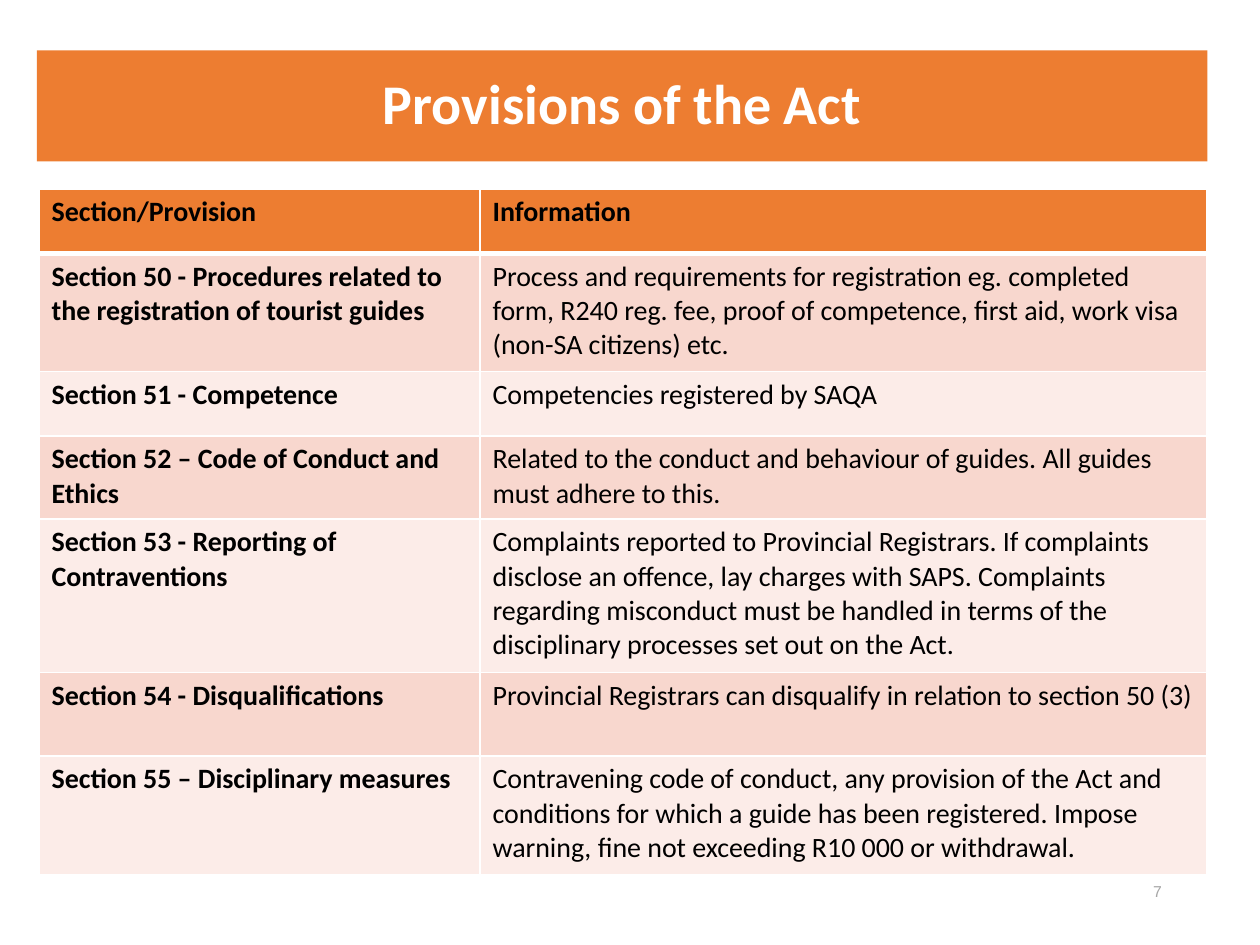
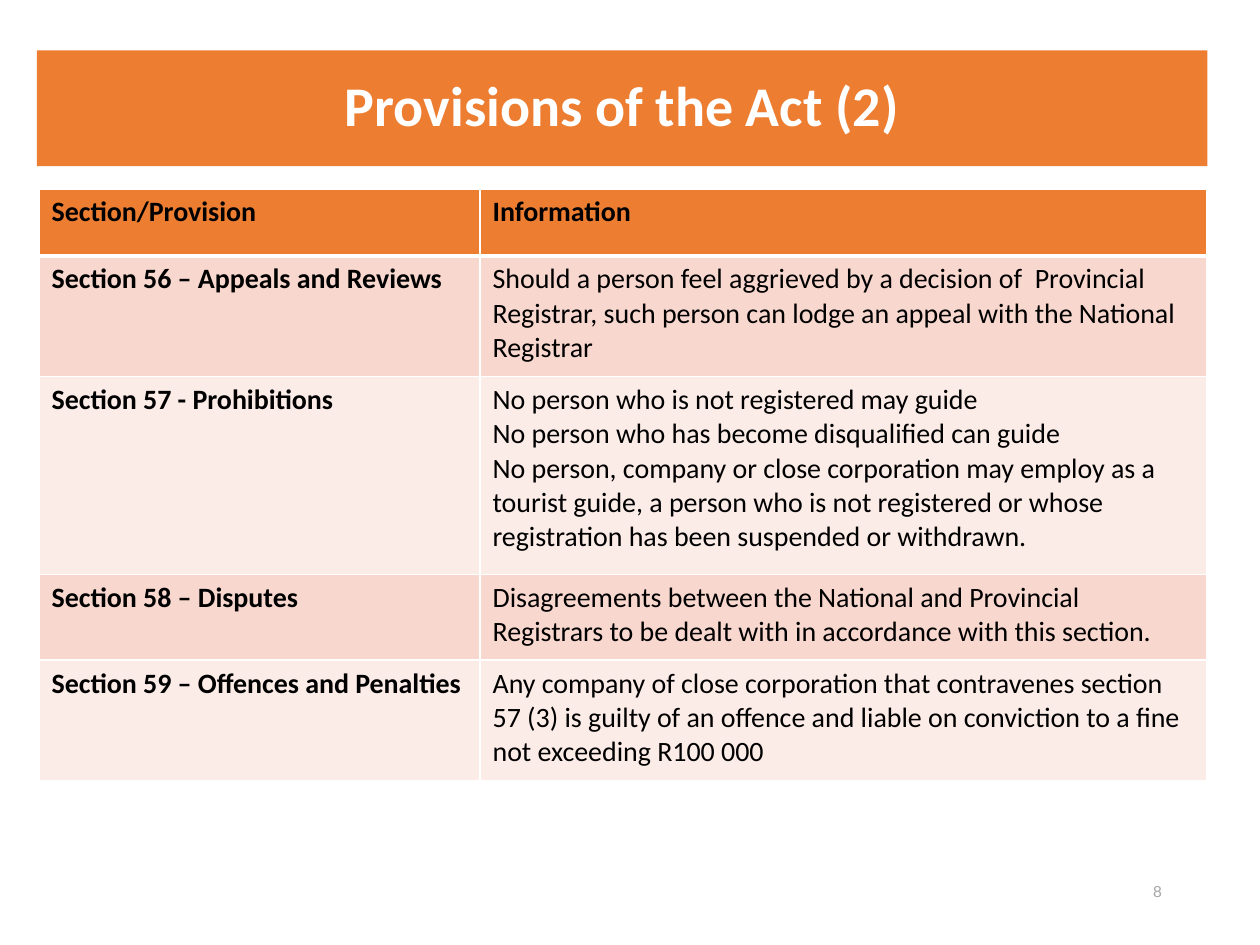
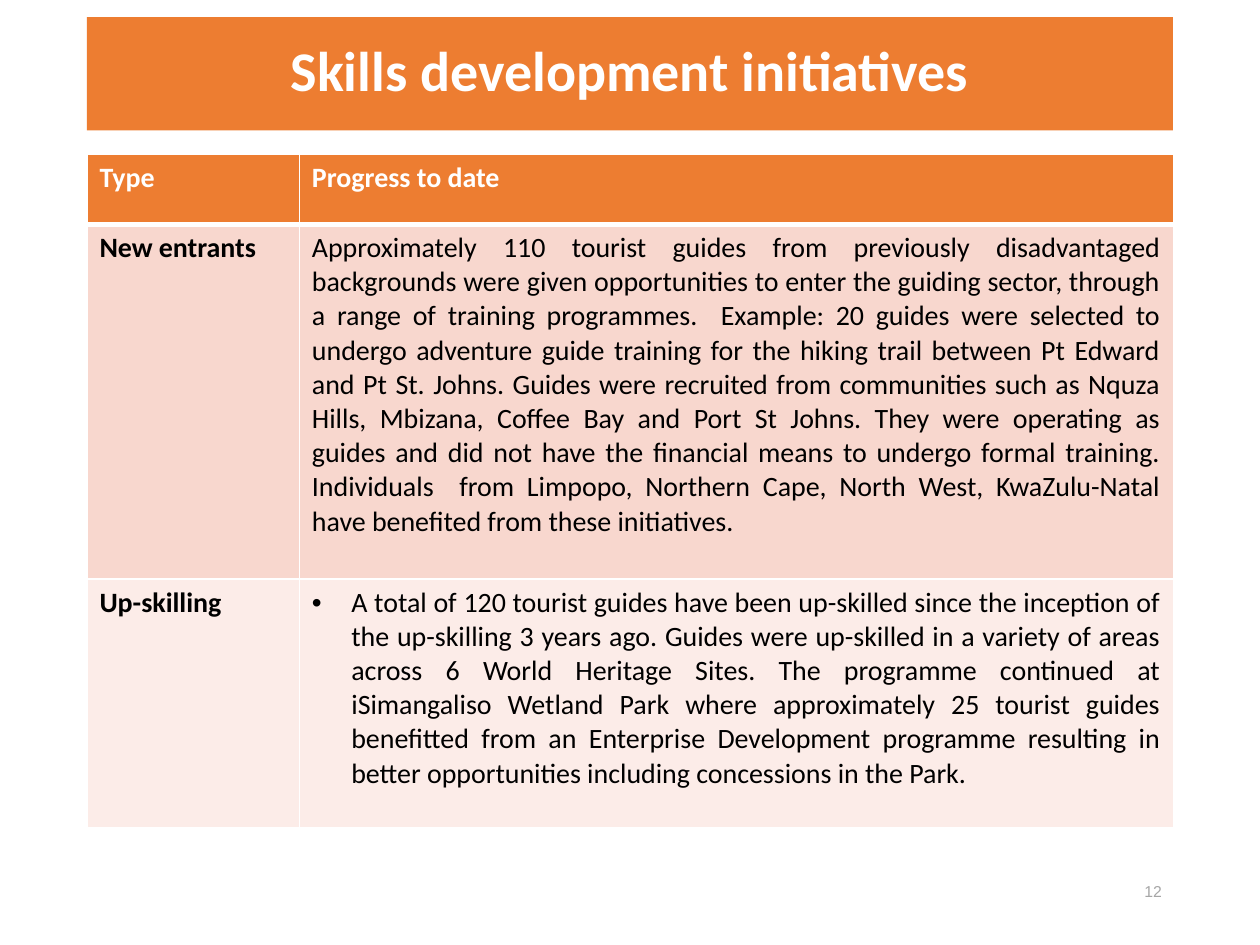
"""Build three slides, each with a title band, a two-column table and a page number."""
from lxml import etree
from pptx import Presentation
from pptx import util as u
from pptx.dml.color import RGBColor
from pptx.enum import shapes, text
from pptx.oxml.ns import qn

Pt = u.Pt
ORANGE = RGBColor(0xED, 0x7D, 0x31)
PEACH = RGBColor(0xF8, 0xD7, 0xCE)
BLUSH = RGBColor(0xFC, 0xEC, 0xE8)
WHITE = RGBColor(0xFF, 0xFF, 0xFF)
BLACK = RGBColor(0, 0, 0)
GRAY = RGBColor(0xA6, 0xA6, 0xA6)

TITLE = {"size": Pt(32), "name": "Calibri", "bold": True}
BODY = {"size": Pt(16), "name": "Calibri"}
PAGE = {"size": Pt(9), "name": "Arial", "bold": False}
ALIGN = text.PP_ALIGN
INDENT = 22.5

ACT = ("Section/Provision", "Information")
DECK = [
    {
        "title": "Provisions of the Act",
        "page": "7",
        "band": (21, 28.8, 669, 63.4),
        "grid": (22.3, 108),
        "cols": (252, 415.4),
        "ink": BLACK,
        "align": ALIGN.LEFT,
        "rows": [
            (36.7, *ACT),
            (67.7, "Section 50 - Procedures related to the registration of tourist guides",
             "Process and requirements for registration eg. completed form, R240 reg. fee, "
             "proof of competence, first aid, work visa (non-SA citizens) etc."),
            (36.7, "Section 51 - Competence", "Competencies registered by SAQA"),
            (47.5, "Section 52 – Code of Conduct and Ethics",
             "Related to the conduct and behaviour of guides. All guides must adhere to this."),
            (87.9, "Section 53 - Reporting of Contraventions",
             "Complaints reported to Provincial Registrars. If complaints disclose an offence, "
             "lay charges with SAPS. Complaints regarding misconduct must be handled in terms "
             "of the disciplinary processes set out on the Act."),
            (47.5, "Section 54 - Disqualifications",
             "Provincial Registrars can disqualify in relation to section 50 (3)"),
            (67.7, "Section 55 – Disciplinary measures",
             "Contravening code of conduct, any provision of the Act and conditions for which "
             "a guide has been registered. Impose warning, fine not exceeding R10 000 or "
             "withdrawal."),
        ],
    },
    {
        "title": "Provisions of the Act (2)",
        "page": "8",
        "band": (21, 28.8, 669, 66.2),
        "grid": (22.3, 108),
        "cols": (252, 415.4),
        "ink": BLACK,
        "align": ALIGN.LEFT,
        "rows": [
            (38.2, *ACT),
            (69.1, "Section 56 – Appeals and Reviews",
             "Should a person feel aggrieved by a decision of  Provincial Registrar, such "
             "person can lodge an appeal with the National Registrar"),
            (113, "Section 57 - Prohibitions",
             "No person who is not registered may guide\n"
             "No person who has become disqualified can guide\n"
             "No person, company or close corporation may employ as a tourist guide, a person "
             "who is not registered or whose registration has been suspended or withdrawn."),
            (49, "Section 58 – Disputes",
             "Disagreements between the National and Provincial Registrars to be dealt with in "
             "accordance with this section."),
            (69.1, "Section 59 – Offences and Penalties",
             "Any company of close corporation that contravenes section 57 (3) is guilty of an "
             "offence and liable on conviction to a fine not exceeding R100 000"),
        ],
    },
    {
        "title": "Skills development initiatives",
        "page": "12",
        "band": (49.7, 9.8, 620.6, 64.8),
        "grid": (49.7, 88.2),
        "cols": (121.4, 499.4),
        "ink": WHITE,
        "align": ALIGN.JUSTIFY,
        "rows": [
            (40, "Type", "Progress to date"),
            (202.7, "New entrants",
             "Approximately 110 tourist guides from previously disadvantaged backgrounds were "
             "given opportunities to enter the guiding sector, through a range of training "
             "programmes.  Example: 20 guides were selected to undergo adventure guide training "
             "for the hiking trail between Pt Edward and Pt St. Johns. Guides were recruited "
             "from communities such as Nquza Hills, Mbizana, Coffee Bay and Port St Johns. They "
             "were operating as guides and did not have the financial means to undergo formal "
             "training. Individuals  from Limpopo, Northern Cape, North West, KwaZulu-Natal "
             "have benefited from these initiatives."),
            (142.2, "Up-skilling",
             "• A total of 120 tourist guides have been up-skilled since the inception of the "
             "up-skilling 3 years ago. Guides were up-skilled in a variety of areas across 6 "
             "World Heritage Sites. The programme continued at iSimangaliso Wetland Park where "
             "approximately 25 tourist guides benefitted from an Enterprise Development "
             "programme resulting in better opportunities including concessions in the Park."),
        ],
    },
]


def write(frame, words, style, ink, align):
    """Fill a text frame, one paragraph a line, with real bullets."""
    frame.word_wrap = True
    for n, line in enumerate(words.split("\n")):
        para = frame.add_paragraph() if n else frame.paragraphs[0]
        para.alignment = align
        run = para.add_run()
        run.text = line.removeprefix("• ")
        run.font.color.rgb = ink
        for key, val in style.items():
            setattr(run.font, key, val)
        if line.startswith("• "):
            props = para._p.get_or_add_pPr()
            props.set("marL", str(Pt(INDENT)))
            props.set("indent", str(-Pt(INDENT)))
            etree.SubElement(props, qn("a:buFont")).set("typeface", "Arial")
            etree.SubElement(props, qn("a:buChar")).set("char", "•")


def edge(cell, row):
    """Draw white cell borders, thick below the header row."""
    props = cell._tc.get_or_add_tcPr()
    for n, side in enumerate("LRTB"):
        thick = (row, side) in ((0, "B"), (1, "T"))
        line = etree.Element(qn("a:ln" + side), w=str(Pt(3 if thick else 1)))
        fill = etree.SubElement(line, qn("a:solidFill"))
        etree.SubElement(fill, qn("a:srgbClr")).set("val", str(WHITE))
        props.insert(n, line)


prs = Presentation()
prs.slide_width, prs.slide_height = Pt(720), Pt(540)

for data in DECK:
    slide = prs.slides.add_slide(prs.slide_layouts[6])

    page = slide.shapes.add_textbox(Pt(584), Pt(500.4), Pt(87), Pt(28.8))
    write(page.text_frame, data["page"], PAGE, GRAY, ALIGN.RIGHT)

    band = slide.shapes.add_shape(shapes.MSO_SHAPE.RECTANGLE, *map(Pt, data["band"]))
    band.shadow.inherit = False
    band.fill.solid()
    band.fill.fore_color.rgb = ORANGE
    band.line.fill.background()
    band.text_frame.vertical_anchor = text.MSO_ANCHOR.MIDDLE
    write(band.text_frame, data["title"], TITLE, WHITE, ALIGN.CENTER)
    band.text_frame.paragraphs[0].line_spacing = 0.9

    rows, cols = data["rows"], data["cols"]
    high = sum(row[0] for row in rows)
    size = map(Pt, (*data["grid"], sum(cols), high))
    grid = slide.shapes.add_table(len(rows), len(cols), *size).table
    grid.first_row = grid.horz_banding = False
    for col, wide in zip(grid.columns, cols):
        col.width = Pt(wide)
    for r, (tall, *cells) in enumerate(rows):
        grid.rows[r].height = Pt(tall)
        for c, words in enumerate(cells):
            cell = grid.cell(r, c)
            cell.fill.solid()
            cell.fill.fore_color.rgb = (PEACH if r % 2 else BLUSH) if r else ORANGE
            edge(cell, r)
            style = BODY | {"bold": r == 0 or c == 0}
            ink = BLACK if r else data["ink"]
            write(cell.text_frame, words, style, ink, data["align"] if r and c else ALIGN.LEFT)

prs.save("out.pptx")
